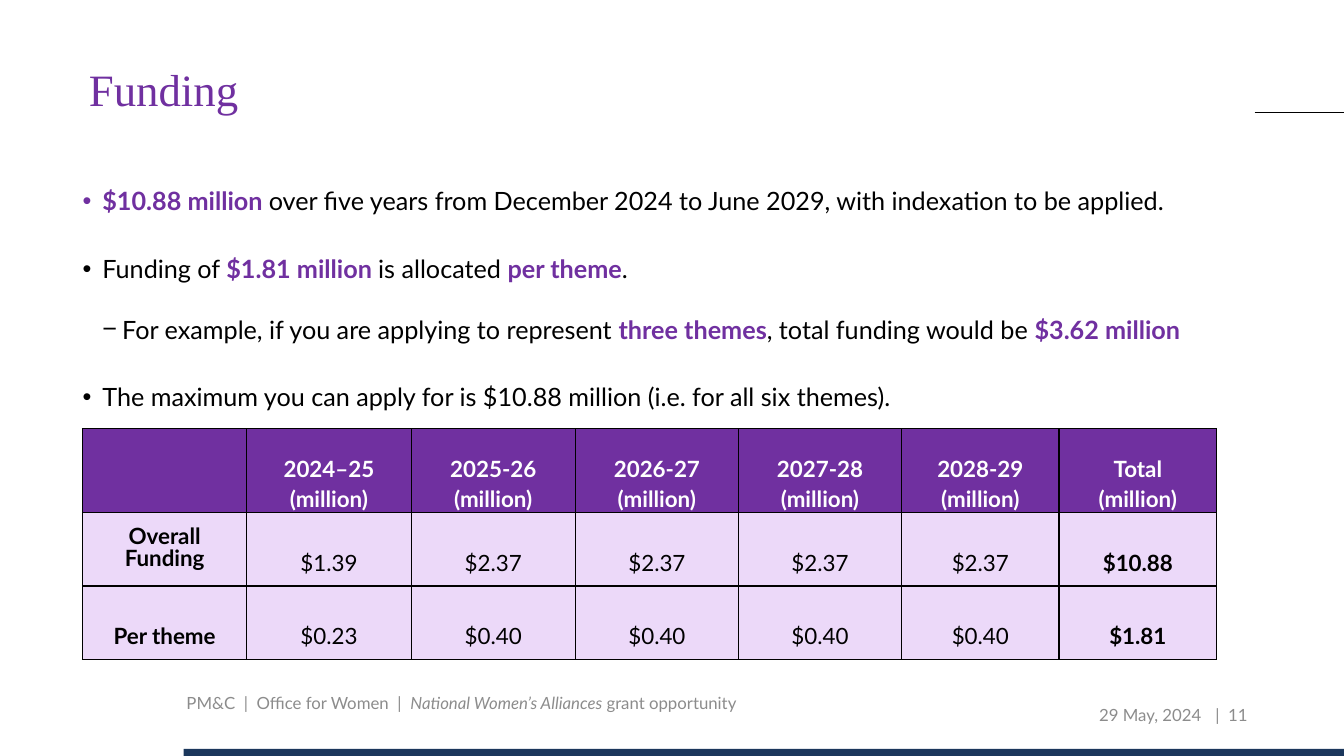
import pptx
import pptx.util
import pptx.dml.color
import pptx.enum.dml
import pptx.enum.shapes
import pptx.enum.text
import pptx.oxml.ns
import lxml.etree
from dataclasses import dataclass

Cm, Pt = pptx.util.Cm, pptx.util.Pt
ALIGN, ANCHOR = pptx.enum.text.PP_ALIGN, pptx.enum.text.MSO_ANCHOR
qn = pptx.oxml.ns.qn


@dataclass(frozen=True)
class Theme:
    purple: str = "7030A0"
    lilac: str = "ECD9F9"
    navy: str = "1B375C"
    grey: str = "8C8C8C"
    black: str = "000000"
    white: str = "FFFFFF"
    head_font: str = "Times New Roman"
    text_font: str = "Lato"
    title_size: int = 32
    body_size: int = 18
    table_size: int = 16
    footer_size: int = 12


T = Theme()

# Content: text marked True is emphasised
TITLE = "Funding"
BULLETS = [  # (level, runs)
    (0, [("$10.88 million ", True),
         ("over five years from December 2024 to June 2029, with indexation to be applied.", False)]),
    (0, [("Funding of ", False), ("$1.81 million ", True), ("is allocated ", False),
         ("per theme", True), (".", False)]),
    (1, [("For example, if you are applying to represent ", False), ("three themes", True),
         (", total funding would be ", False), ("$3.62 million", True)]),
    (0, [("The maximum you can apply for is $10.88 million (i.e. for all six themes).", False)]),
]
PERIODS = ["2024–25", "2025-26", "2026-27", "2027-28", "2028-29", "Total"]
UNIT = "(million)"
FUNDING = [
    ["Overall Funding", "$1.39", "$2.37", "$2.37", "$2.37", "$2.37", "$10.88"],
    ["Per theme", "$0.23", "$0.40", "$0.40", "$0.40", "$0.40", "$1.81"],
]
FOOTERS = [  # (left, top, width, alignment, runs)
    (4.7, 17.4, 14.9, ALIGN.LEFT, [("PM&C  |  Office for Women  |  ", False),
                                   ("National Women’s Alliances ", True),
                                   ("grant opportunity", False)]),
    (25.63, 17.7, 4.65, ALIGN.RIGHT, [("29 May, 2024", False)]),
    (30.63, 17.7, 1.02, ALIGN.LEFT, [("|  11", False)]),
]

# Layout in centimetres
SLIDE_W, SLIDE_H = 33.87, 19.05
TITLE_BOX = (2.24, 1.7, 29.41, 2.31)
BODY_BOX = (2.08, 4.29, 29.41, 6.4)
TABLE_LEFT, TABLE_TOP = 2.08, 10.8
COLUMNS = [4.14] * 3 + [4.11] * 2 + [3.97] * 2
ROWS = [2.11, 1.85, 1.85]
INDENT = 0.5
LEVELS = [("•", 10), ("−", 5)]  # bullet and space before


def rgb(value):
    return pptx.dml.color.RGBColor.from_string(value)


def add_run(p, text, size, color, font=T.text_font, bold=False, italic=False):
    r = p.add_run()
    r.text = text
    r.font.name, r.font.size = font, Pt(size)
    r.font.bold, r.font.italic = bold, italic
    r.font.color.rgb = rgb(color)


def place(sp, box):
    sp.left, sp.top, sp.width, sp.height = [Cm(v) for v in box]


def frame(sp, anchor):
    tf = sp.text_frame
    tf.word_wrap = True
    tf.auto_size = pptx.enum.text.MSO_AUTO_SIZE.NONE
    tf.vertical_anchor = anchor
    tf.margin_left = tf.margin_right = tf.margin_top = tf.margin_bottom = 0
    return tf


def next_paragraph(tf, index):
    return tf.add_paragraph() if index else tf.paragraphs[0]


def set_bullet(p, char, level):
    pPr = p._p.get_or_add_pPr()
    pPr.set("marL", str(Cm(INDENT * (level + 1))))
    pPr.set("indent", str(-Cm(INDENT)))
    lxml.etree.SubElement(pPr, qn("a:buFont"), typeface="Arial")
    lxml.etree.SubElement(pPr, qn("a:buChar"), char=char)


def set_borders(cell):
    tcPr = cell._tc.get_or_add_tcPr()
    for i, side in enumerate(("lnL", "lnR", "lnT", "lnB")):
        ln = lxml.etree.Element(qn("a:" + side), w=str(Pt(1)))
        fill = lxml.etree.SubElement(ln, qn("a:solidFill"))
        lxml.etree.SubElement(fill, qn("a:srgbClr"), val=T.black)
        tcPr.insert(i, ln)


def fill_cell(cell, lines, fill, color, bold, top_gap):
    cell.fill.solid()
    cell.fill.fore_color.rgb = rgb(fill)
    set_borders(cell)
    cell.vertical_anchor = ANCHOR.MIDDLE
    cell.margin_left = cell.margin_right = Cm(0.18)
    cell.margin_top, cell.margin_bottom = Pt(top_gap), 0
    for i, line in enumerate(lines):
        p = next_paragraph(cell.text_frame, i)
        p.alignment = ALIGN.CENTER
        p.line_spacing, p.space_after = Pt(16), Pt(6)
        add_run(p, line, T.table_size, color, bold=bold)


def main():
    prs = pptx.Presentation()
    prs.slide_width, prs.slide_height = Cm(SLIDE_W), Cm(SLIDE_H)
    s = prs.slides.add_slide(prs.slide_layouts[1])

    # Rule and bottom band
    rule = s.shapes.add_connector(pptx.enum.shapes.MSO_CONNECTOR.STRAIGHT,
                                  Cm(31.62), Cm(2.82), Cm(SLIDE_W), Cm(2.82))
    rule.line.color.rgb, rule.line.width = rgb(T.black), Pt(0.5)
    lxml.etree.SubElement(rule._element.spPr, qn("a:effectLst"))
    band = s.shapes.add_shape(pptx.enum.shapes.MSO_SHAPE.RECTANGLE,
                              Cm(4.63), Cm(18.87), Cm(SLIDE_W - 4.63), Cm(SLIDE_H - 18.87))
    band.shadow.inherit = False
    band.fill.solid()
    band.fill.fore_color.rgb = rgb(T.navy)
    band.line.fill.background()

    # Title
    place(s.shapes.title, TITLE_BOX)
    p = frame(s.shapes.title, ANCHOR.TOP).paragraphs[0]
    p.alignment, p.line_spacing = ALIGN.LEFT, 0.9
    add_run(p, TITLE, T.title_size, T.purple, T.head_font)

    # Bullets
    body = s.placeholders[1]
    place(body, BODY_BOX)
    tf = frame(body, ANCHOR.TOP)
    for i, (level, runs) in enumerate(BULLETS):
        char, before = LEVELS[level]
        p = next_paragraph(tf, i)
        p.level, p.line_spacing = level, 1.5
        p.space_before, p.space_after = Pt(before), Pt(6)
        set_bullet(p, char, level)
        for text, strong in runs:
            add_run(p, text, T.body_size, T.purple if strong else T.black, bold=strong)

    # Funding table
    table = s.shapes.add_table(len(ROWS), len(COLUMNS), Cm(TABLE_LEFT), Cm(TABLE_TOP),
                               Cm(sum(COLUMNS)), Cm(sum(ROWS))).table
    table.first_row = table.horz_banding = False
    for column, width in zip(table.columns, COLUMNS):
        column.width = Cm(width)
    for row, height in zip(table.rows, ROWS):
        row.height = Cm(height)
    for c, lines in enumerate([[]] + [[period, UNIT] for period in PERIODS]):
        fill_cell(table.cell(0, c), lines, T.purple, T.white, True, 22)
    for r, values in enumerate(FUNDING, 1):
        for c, value in enumerate(values):
            top_gap = 0 if value == "Overall Funding" else 22
            fill_cell(table.cell(r, c), [value], T.lilac, T.black,
                      c in (0, len(values) - 1), top_gap)

    # Footer
    for left, top, width, align, runs in FOOTERS:
        sp = s.shapes.add_textbox(Cm(left), Cm(top), Cm(width), Cm(0.64))
        p = frame(sp, ANCHOR.MIDDLE).paragraphs[0]
        p.alignment = align
        for text, italic in runs:
            add_run(p, text, T.footer_size, T.grey, italic=italic)

    prs.save("out.pptx")


if __name__ == "__main__":
    main()
